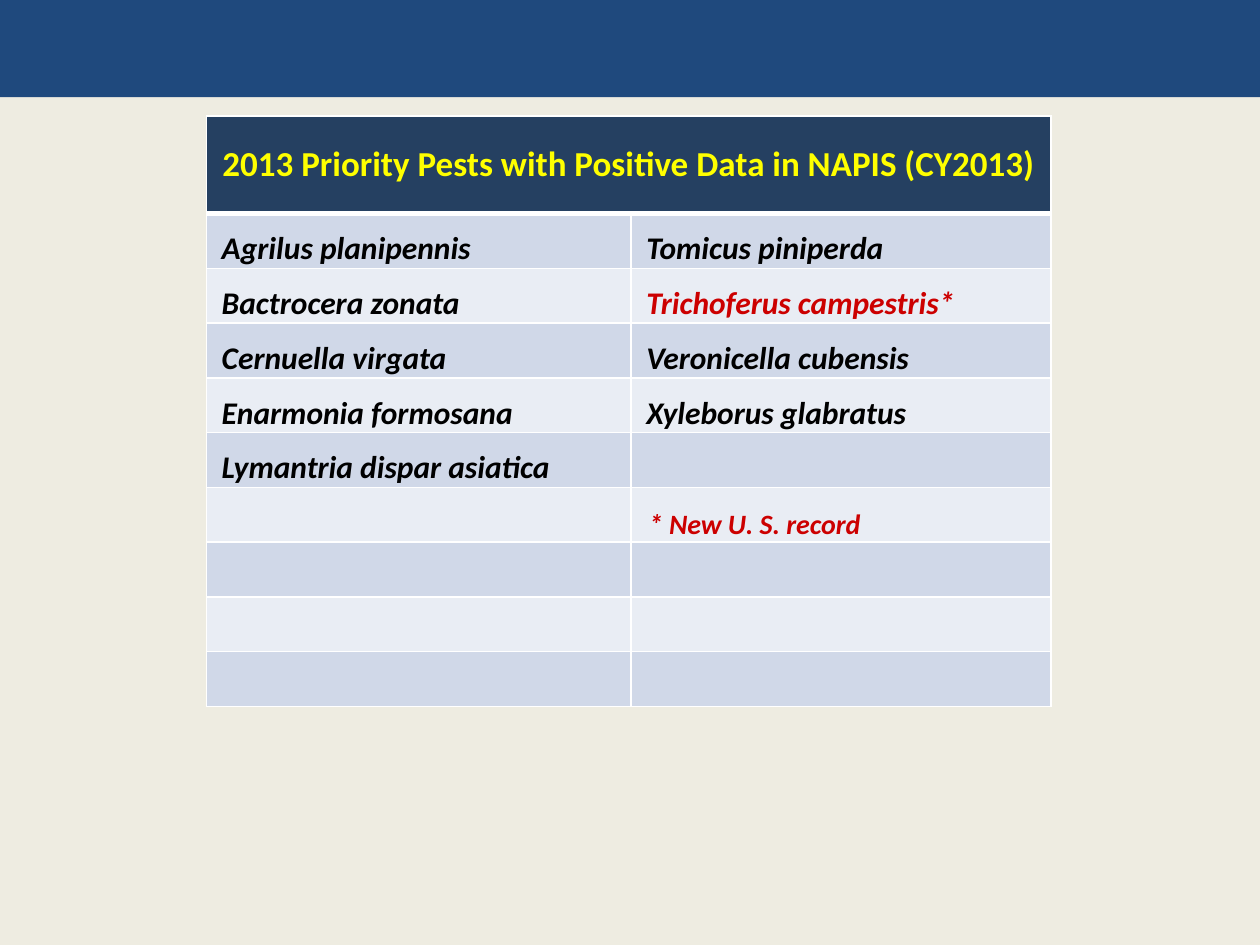
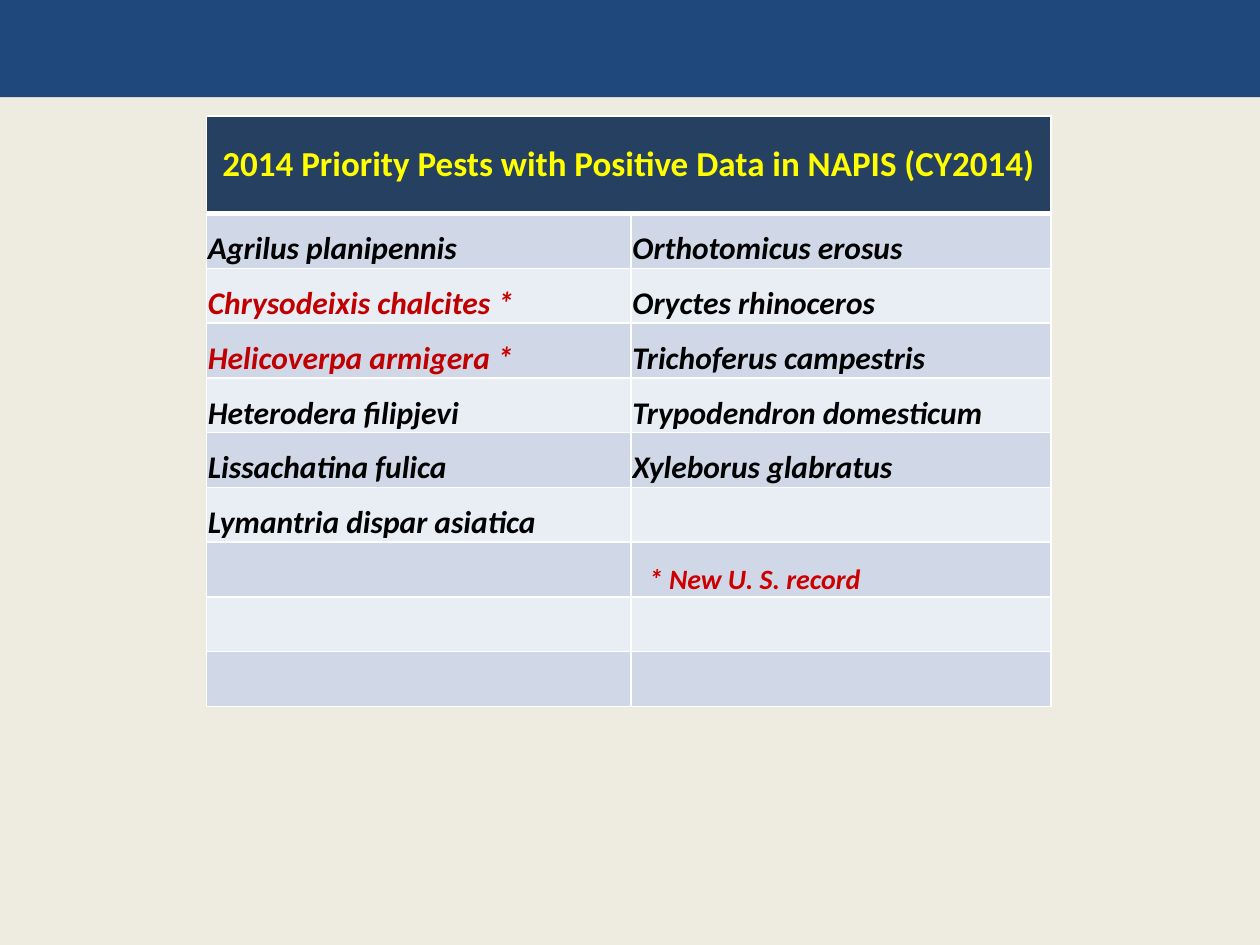
import pptx
import pptx.dml.color
import pptx.enum.shapes
import pptx.enum.text
import pptx.oxml
import pptx.oxml.ns
import pptx.util

COLORS = {
    "paper": "EEECE1", "band": "1F497D", "header": "254061", "title": "FFFF00",
    "odd": "D0D8E8", "even": "E9EDF4", "rule": "FFFFFF",
    "text": "000000", "record": "CC0000", "new_pest": "C00000",
}
FONT = "Calibri"
# Shares of the slide's width or height
BAND_HEIGHT = 0.103
TABLE_LEFT, TABLE_TOP = 0.164, 0.123
COLUMN_WIDTHS = (0.337, 0.333)
HEADER_HEIGHT, ROW_HEIGHT = 0.103, 0.058
PEST_ROWS = 9
NOTE_INDENT = 0.13  # inches
NOTE = "* New U. S. record"


def rgb(name):
    return pptx.dml.color.RGBColor.from_string(COLORS[name])


class PestDeck:
    def __init__(self):
        self.deck = pptx.Presentation()
        self.deck.slide_width = pptx.util.Inches(10)
        self.deck.slide_height = pptx.util.Inches(7.5)
        self.page = None

    def across(self, share):
        return round(self.deck.slide_width * share)

    def down(self, share):
        return round(self.deck.slide_height * share)

    def add_page(self):
        self.page = self.deck.slides.add_slide(self.deck.slide_layouts[6])
        self.page.background.fill.solid()
        self.page.background.fill.fore_color.rgb = rgb("paper")
        self.add_band()

    def add_band(self):
        band = self.page.shapes.add_shape(
            pptx.enum.shapes.MSO_SHAPE.RECTANGLE,
            0, 0, self.across(1), self.down(BAND_HEIGHT))
        band.shadow.inherit = False
        band.fill.solid()
        band.fill.fore_color.rgb = rgb("band")
        band.line.fill.background()

    def add_span(self, para, text, color, size, italic=False):
        span = para.add_run()
        span.text = text
        span.font.name = FONT
        span.font.size = pptx.util.Pt(size)
        span.font.bold = True
        span.font.italic = italic
        span.font.color.rgb = rgb(color)

    def style_cell(self, cell, fill, top=1, bottom=1):
        cell.fill.solid()
        cell.fill.fore_color.rgb = rgb(fill)
        properties = cell._tc.get_or_add_tcPr()
        widths = {"lnL": 1, "lnR": 1, "lnT": top, "lnB": bottom}
        for place, (side, width) in enumerate(widths.items()):
            properties.insert(place, pptx.oxml.parse_xml(
                f'<a:{side} {pptx.oxml.ns.nsdecls("a")} w="{pptx.util.Pt(width)}">'
                f'<a:solidFill><a:srgbClr val="{COLORS["rule"]}"/></a:solidFill>'
                f'</a:{side}>'))

    def fill_cell(self, cell, spans, indent, size):
        cell.vertical_anchor = pptx.enum.text.MSO_ANCHOR.BOTTOM
        cell.margin_left = cell.margin_right = cell.margin_top = pptx.util.Inches(0.01)
        cell.margin_bottom = 0
        para = cell.text_frame.paragraphs[0]
        if indent:
            para._p.get_or_add_pPr().set("marL", str(pptx.util.Inches(indent)))
        for text, color in spans:
            self.add_span(para, text, color, size, italic=True)

    def add_header(self, table, title):
        for cell in table.rows[0].cells:
            self.style_cell(cell, "header", bottom=3)
        header = table.cell(0, 0)
        header.merge(table.cell(0, 1))
        header.vertical_anchor = pptx.enum.text.MSO_ANCHOR.MIDDLE
        para = header.text_frame.paragraphs[0]
        para.alignment = pptx.enum.text.PP_ALIGN.CENTER
        self.add_span(para, title, "title", 20)

    def add_pest_table(self, year, columns, note_row, indent):
        height = HEADER_HEIGHT + PEST_ROWS * ROW_HEIGHT
        table = self.page.shapes.add_table(
            PEST_ROWS + 1, len(columns),
            self.across(TABLE_LEFT), self.down(TABLE_TOP),
            self.across(sum(COLUMN_WIDTHS)), self.down(height)).table
        table.first_row = table.horz_banding = False
        for column, width in zip(table.columns, COLUMN_WIDTHS):
            column.width = self.across(width)
        for number, row in enumerate(table.rows):
            row.height = self.down(ROW_HEIGHT if number else HEADER_HEIGHT)

        self.add_header(table, f"{year} Priority Pests with Positive Data in NAPIS (CY{year})")

        # Banded rows with the pest names
        for number in range(1, PEST_ROWS + 1):
            for place, pests in enumerate(columns):
                cell = table.cell(number, place)
                self.style_cell(cell, "odd" if number % 2 else "even",
                                top=3 if number == 1 else 1)
                if number <= len(pests):
                    pest = pests[number - 1]
                    spans = [(pest, "text")] if isinstance(pest, str) else pest
                    self.fill_cell(cell, spans, indent, 18)

        # Key to the asterisk
        self.fill_cell(table.cell(note_row, 1), [(NOTE, "record")], NOTE_INDENT, 16)


def new_pest(name):
    return [(name + " ", "new_pest"), ("*", "record")]


def main():
    pests = PestDeck()

    # 2013
    pests.add_page()
    pests.add_pest_table(2013, [
        ["Agrilus planipennis", "Bactrocera zonata", "Cernuella virgata",
         "Enarmonia formosana", "Lymantria dispar asiatica"],
        ["Tomicus piniperda", [("Trichoferus campestris*", "record")],
         "Veronicella cubensis", "Xyleborus glabratus"],
    ], note_row=6, indent=0.11)

    # 2014
    pests.add_page()
    pests.add_pest_table(2014, [
        ["Agrilus planipennis", new_pest("Chrysodeixis chalcites"),
         new_pest("Helicoverpa armigera"), "Heterodera filipjevi",
         "Lissachatina fulica", "Lymantria dispar asiatica"],
        ["Orthotomicus erosus", "Oryctes rhinoceros", "Trichoferus campestris",
         "Trypodendron domesticum", "Xyleborus glabratus"],
    ], note_row=7, indent=0)

    pests.deck.save("out.pptx")


if __name__ == "__main__":
    main()
